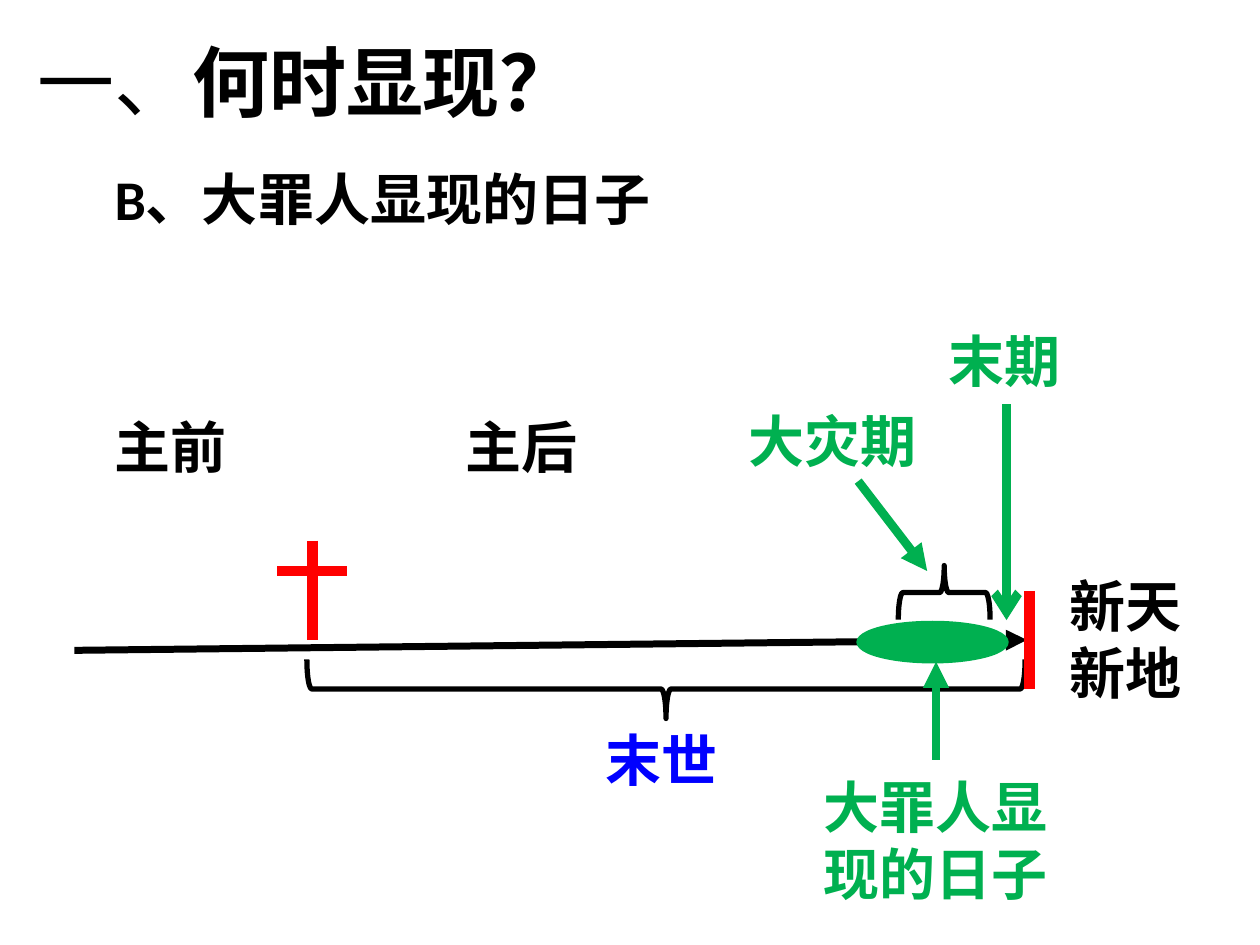
from dataclasses import dataclass

from lxml.etree import SubElement
from pptx import Presentation
from pptx.dml.color import RGBColor as Rgb
from pptx.enum.shapes import MSO_CONNECTOR as Link, MSO_SHAPE as Shape
from pptx.enum.text import MSO_ANCHOR as Anchor, PP_ALIGN as Align
from pptx.oxml.ns import qn
from pptx.util import Cm, Pt


@dataclass(frozen=True)
class Theme:
    font: str = "Calibri"
    title_size: int = 44
    label_size: int = 32
    ink: str = "000000"
    red: str = "FF0000"
    blue: str = "0000FF"
    green: str = "00B050"
    axis_width: int = 4
    mark_width: int = 6
    pointer_width: int = 5
    brace_width: int = 3
    oval_width: int = 2


class TimelineSlide:
    """Holds the theme and the slide; all lengths are centimetres."""

    def __init__(self, slide, theme):
        self.slide = slide
        self.theme = theme
        self.shapes = slide.shapes

    def start_group(self):
        self.shapes = self.slide.shapes.add_group_shape().shapes

    def style_run(self, run, size, color, bold=True):
        run.font.name = self.theme.font
        run.font.size = Pt(size)
        run.font.bold = bold
        run.font.color.rgb = Rgb.from_string(color)

    def title(self, number, heading, left, top, width, height):
        holder = self.slide.shapes.title
        holder.left, holder.top = Cm(left), Cm(top)
        holder.width, holder.height = Cm(width), Cm(height)
        holder.text_frame.vertical_anchor = Anchor.MIDDLE
        line = holder.text_frame.paragraphs[0]
        line.alignment = Align.LEFT
        for words, bold in ((number, False), (heading, True)):
            run = line.add_run()
            run.text = words
            self.style_run(run, self.theme.title_size, self.theme.ink, bold)

    def label(self, words, left, top, color, width=3.05, height=1.63):
        box = self.shapes.add_textbox(Cm(left), Cm(top), Cm(width), Cm(height))
        box.text_frame.word_wrap = True
        box.text_frame.text = words
        run = box.text_frame.paragraphs[0].runs[0]
        self.style_run(run, self.theme.label_size, color)

    def line(self, start, end, color, width, head=None):
        points = [Cm(value) for value in (*start, *end)]
        stroke = self.shapes.add_connector(Link.STRAIGHT, *points)
        stroke.line.color.rgb = Rgb.from_string(color)
        stroke.line.width = Pt(width)
        if head:
            SubElement(stroke.line._get_or_add_ln(), qn("a:tailEnd"), type=head)
        SubElement(stroke._element.spPr, qn("a:effectLst"))

    def outline(self, kind, left, top, width, height, color, weight):
        shape = self.shapes.add_shape(kind, Cm(left), Cm(top), Cm(width), Cm(height))
        shape.shadow.inherit = False
        shape.line.color.rgb = Rgb.from_string(color)
        shape.line.width = Pt(weight)
        return shape

    def brace(self, left, top, width, height, rotation):
        brace = self.outline(Shape.RIGHT_BRACE, left, top, width, height,
                             self.theme.ink, self.theme.brace_width)
        brace.fill.background()
        brace.rotation = rotation

    def oval(self, left, top, width, height, color):
        oval = self.outline(Shape.OVAL, left, top, width, height,
                            color, self.theme.oval_width)
        oval.fill.solid()
        oval.fill.fore_color.rgb = Rgb.from_string(color)


def main():
    deck = Presentation()
    deck.slide_width, deck.slide_height = Cm(25.4), Cm(19.05)
    theme = Theme()
    page = TimelineSlide(deck.slides.add_slide(deck.slide_layouts[5]), theme)

    # Headings
    page.title("一、", "何时显现？", 0.51, 0.03, 22.86, 3.18)
    page.label("B、大罪人显现的日子", 2.06, 3.2, theme.ink, width=20.19)

    # Time axis and the cross that divides it
    page.line((1.5, 13.11), (20.7, 12.9), theme.ink, theme.axis_width, "triangle")
    page.line((6.3, 10.9), (6.3, 12.9), theme.red, theme.mark_width)
    page.line((5.59, 11.51), (6.99, 11.51), theme.red, theme.mark_width)
    page.label("主前", 2.06, 8.2, theme.ink)
    page.label("主后", 9.14, 8.2, theme.ink)

    # Last age, from the cross to the end mark
    page.brace(12.83, 6.65, 1.19, 14.48, 90)
    page.label("末世", 11.96, 14.5, theme.blue)
    page.line((20.75, 11.91), (20.75, 13.89), theme.red, theme.mark_width)
    page.label("新天新地", 21.31, 11.4, theme.ink, height=3)

    # Final period
    page.line((20.29, 8.15), (20.29, 12.5), theme.green, theme.pointer_width, "arrow")
    page.label("末期", 18.87, 6.45, theme.green)

    # Tribulation
    page.brace(18.49, 11.02, 1.09, 1.85, 270)
    page.line((17.3, 9.7), (18.69, 11.51), theme.green, theme.pointer_width, "triangle")
    page.label("大灾期", 14.83, 8.08, theme.green, width=4.17)

    # Day of the man of sin
    page.start_group()
    page.oval(17.3, 12.55, 3, 0.79, theme.green)
    page.line((18.87, 15.32), (18.87, 13.34), theme.green, theme.pointer_width, "triangle")
    page.label("大罪人显现的日子", 16.36, 15.44, theme.green, width=5.33, height=3)

    deck.save("out.pptx")


if __name__ == "__main__":
    main()
